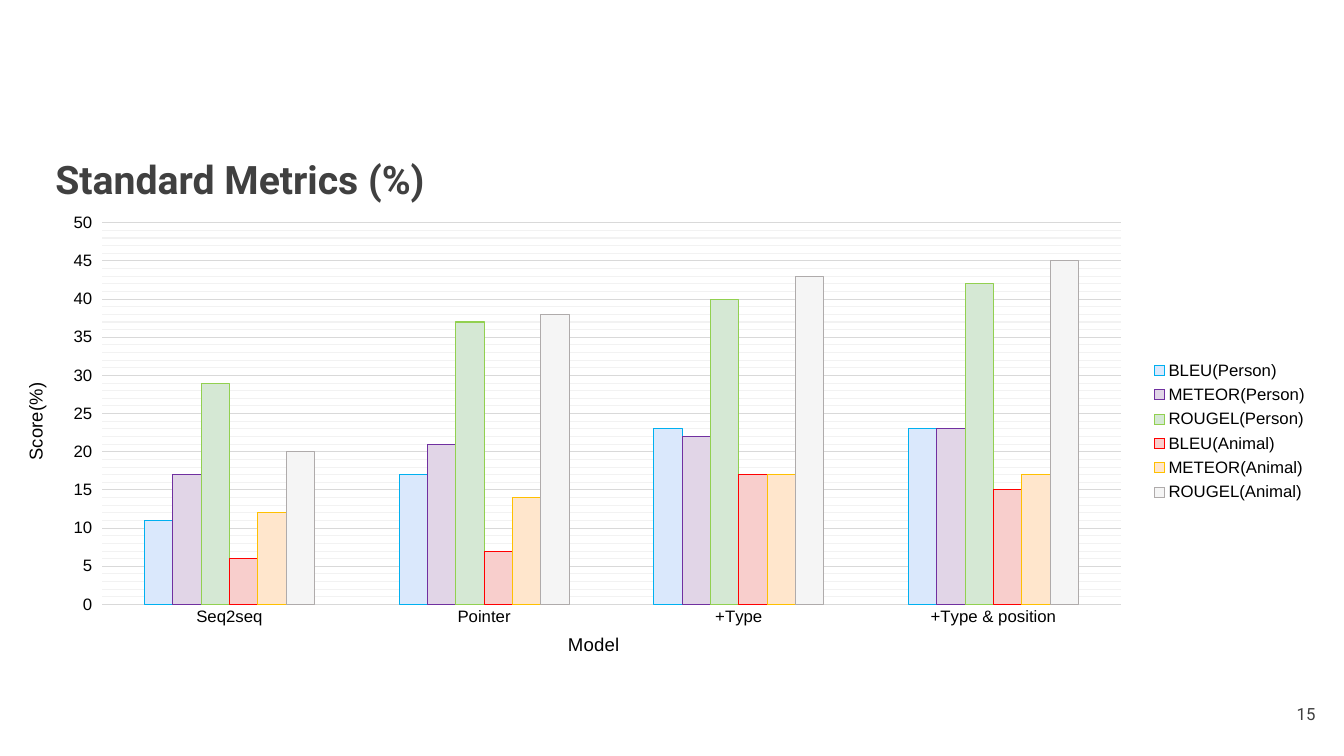
from lxml.etree import SubElement
from pptx import Presentation
from pptx.chart.data import CategoryChartData
from pptx.dml.color import RGBColor
from pptx.enum.chart import XL_CHART_TYPE, XL_LEGEND_POSITION, XL_TICK_MARK
from pptx.enum.text import MSO_ANCHOR, PP_ALIGN
from pptx.oxml.ns import qn
from pptx.util import Pt

COLORS = {
    "title": "404040", "number": "3F3F3F", "text": "000000",
    "grid": "D9D9D9", "minor": "F2F2F2",
}
CATEGORIES = ["Seq2seq", "Pointer", "+Type", "+Type & position"]
# name, values, fill, outline
SERIES = [
    ("BLEU(Person)", (11, 17, 23, 23), "DAE8FC", "00B0F0"),
    ("METEOR(Person)", (17, 21, 22, 23), "E1D5E7", "7030A0"),
    ("ROUGEL(Person)", (29, 37, 40, 42), "D5E8D4", "92D050"),
    ("BLEU(Animal)", (6, 7, 17, 15), "F8CECC", "FF0000"),
    ("METEOR(Animal)", (12, 14, 17, 17), "FFE6CC", "FFC000"),
    ("ROUGEL(Animal)", (20, 38, 43, 45), "F5F5F5", "AFABAB"),
]


def style_font(font, name, size, color, bold=False):
    font.name, font.size, font.bold = name, Pt(size), bold
    font.color.rgb = RGBColor.from_string(COLORS[color])


def place(element, index, inner=False, **fractions):
    """Give a chart part a manual layout in fractions of the chart."""
    for old in element.findall(qn("c:layout")):
        element.remove(old)
    layout = SubElement(element, qn("c:layout"))
    element.insert(index, layout)
    manual = SubElement(layout, qn("c:manualLayout"))
    if inner:
        SubElement(manual, qn("c:layoutTarget")).set("val", "inner")
    for key in ("x", "y"):
        SubElement(manual, qn(f"c:{key}Mode")).set("val", "edge")
    for key, value in fractions.items():
        SubElement(manual, qn(f"c:{key}")).set("val", str(value))


prs = Presentation()
prs.slide_width, prs.slide_height = Pt(960), Pt(540)
s = prs.slides.add_slide(prs.slide_layouts[5])

# Title
title = s.shapes.title
title.left, title.top, title.width, title.height = Pt(32.4), Pt(102.2), Pt(894.2), Pt(45.4)
tf = title.text_frame
tf.margin_left = tf.margin_right = tf.margin_bottom = Pt(7.2)
tf.margin_top = Pt(9)
tf.vertical_anchor = MSO_ANCHOR.TOP
p = tf.paragraphs[0]
p.text = "Standard Metrics (%)"
p.alignment = PP_ALIGN.LEFT
style_font(p.font, "Roboto", 28, "title", bold=True)

# Chart
data = CategoryChartData()
data.categories = CATEGORIES
for name, values, _, _ in SERIES:
    data.add_series(name, values)
chart = s.shapes.add_chart(XL_CHART_TYPE.COLUMN_CLUSTERED, Pt(0), Pt(147.6),
                           Pt(960), Pt(324.7), data).chart
style_font(chart.font, "Arial", 12, "text")
chart.has_title = False
plot = chart.plots[0]
plot.gap_width, plot.overlap, plot.vary_by_categories = 300, 0, False
for series, (_, _, fill, line) in zip(plot.series, SERIES):
    series.format.fill.solid()
    series.format.fill.fore_color.rgb = RGBColor.from_string(fill)
    series.format.line.color.rgb = RGBColor.from_string(line)
    series.format.line.width = Pt(0.75)

# Axes
cat_axis, val_axis = chart.category_axis, chart.value_axis
cat_axis.major_tick_mark = XL_TICK_MARK.NONE
val_axis.major_tick_mark = XL_TICK_MARK.OUTSIDE
val_axis.minimum_scale, val_axis.maximum_scale = 0, 50
val_axis.major_unit, val_axis.minor_unit = 5, 1
val_axis.has_major_gridlines = val_axis.has_minor_gridlines = True
val_axis.format.line.fill.background()
for part in (cat_axis, val_axis.major_gridlines):
    part.format.line.color.rgb = RGBColor.from_string(COLORS["grid"])
    part.format.line.width = Pt(0.75)
for axis, text, x, y in ((cat_axis, "Model", 0.42, 0.94),
                         (val_axis, "Score(%)", 0.015, 0.385)):
    style_font(axis.tick_labels.font, "Arial", 12, "text")
    p = axis.axis_title.text_frame.paragraphs[0]
    p.text = text
    style_font(p.font, "Arial", 13.3, "text")
    place(axis.axis_title._element, 1, x=x, y=y)

# Minor gridlines
minor = val_axis._element.find(qn("c:minorGridlines"))
ln = SubElement(SubElement(minor, qn("c:spPr")), qn("a:ln"), w=str(Pt(0.75)))
SubElement(SubElement(ln, qn("a:solidFill")), qn("a:srgbClr"), val=COLORS["minor"])

# Legend and plot area
chart.has_legend = True
legend = chart.legend
legend.position = XL_LEGEND_POSITION.RIGHT
legend.include_in_layout = False
style_font(legend.font, "Arial", 12, "text")
place(legend._element, 1, x=0.85, y=0.33, w=0.13, h=0.34)
place(chart._chartSpace.chart.plotArea, 0, inner=True, x=0.076, y=0.036, w=0.758, h=0.849)

# Slide number
tf = s.shapes.add_textbox(Pt(889.2), Pt(489.6), Pt(57.6), Pt(41)).text_frame
tf.word_wrap = True
tf.vertical_anchor = MSO_ANCHOR.MIDDLE
p = tf.paragraphs[0]
p.text = "15"
p.alignment = PP_ALIGN.RIGHT
style_font(p.font, "Roboto", 12, "number")

prs.save("out.pptx")
